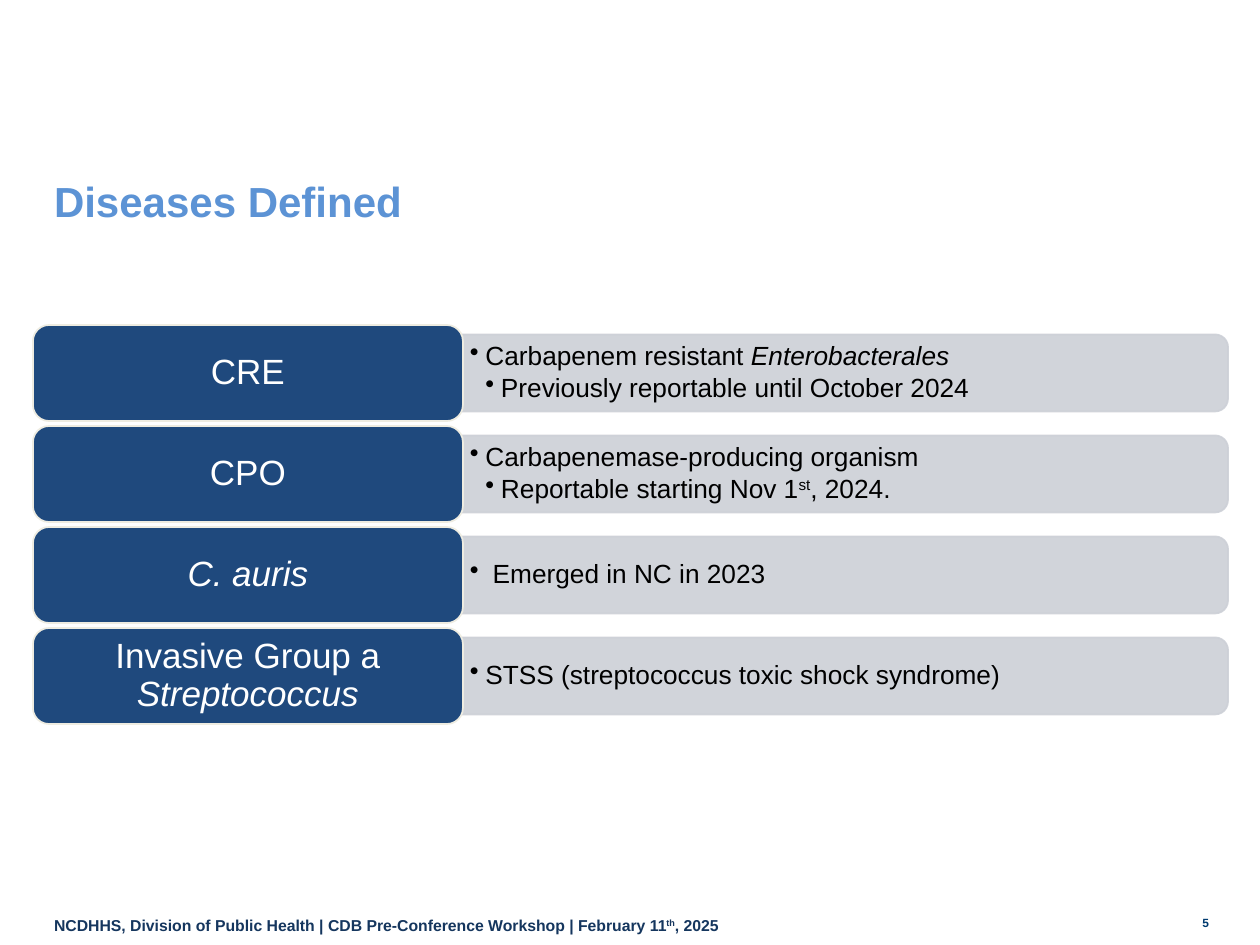
from lxml import etree
from pptx import Presentation
from pptx import util as u
from pptx.dml.color import RGBColor
from pptx.enum import shapes, text
from pptx.oxml.ns import qn

NAVY = RGBColor(0x1F, 0x49, 0x7D)
CREAM = RGBColor(0xEE, 0xEC, 0xE1)
GREY = RGBColor(0xCD, 0xD0, 0xD7)
SKY = RGBColor(0x5C, 0x93, 0xD5)
INK = RGBColor(0x15, 0x36, 0x5E)
BLUE = RGBColor(0x00, 0x3B, 0x70)
WHITE = RGBColor(0xFF, 0xFF, 0xFF)
BLACK = RGBColor(0, 0, 0)

# A paragraph is a list of (words, style) runs; style is "", "i" or "sup".
TITLE = [("Diseases Defined", "")]
FOOTER = [
    ("NCDHHS, Division of Public Health | CDB Pre-Conference Workshop | February 11", ""),
    ("th", "sup"),
    (", 2025", ""),
]
PAGE = [("5", "")]
ROWS = [
    ([("CRE", "")],
     [[("Carbapenem resistant ", ""), ("Enterobacterales", "i")],
      [("Previously reportable until October 2024", "")]]),
    ([("CPO", "")],
     [[("Carbapenemase-producing organism", "")],
      [("Reportable starting Nov 1", ""), ("st", "sup"), (", 2024.", "")]]),
    ([("C. auris", "i")],
     [[(" Emerged in NC in 2023", "")]]),
    ([("Invasive Group a ", ""), ("Streptococcus", "i")],
     [[("STSS (streptococcus toxic shock syndrome)", "")]]),
]

MID, PITCH = 373, 101           # centre of the first row, step between rows
TAG_X, TAG_W, TAG_H = 33, 430, 96
BAR_X, BAR_W, BAR_H = 462, 766, 77
LIST_W, LIST_H = 761, 69
INDENT = 15.5


def px(n):
    return round(n * u.Inches(1) / 126)


def bullet(para, level):
    para.level = level
    para.space_after = u.Pt(2.25)
    ppr = para._p.get_or_add_pPr()
    ppr.set("marL", str(px(INDENT * level)))
    ppr.set("indent", str(-px(INDENT)))
    etree.SubElement(ppr, qn("a:buChar")).set("char", "•")


def write(shape, paras, size, color, bold=False, align=text.PP_ALIGN.LEFT,
          anchor=text.MSO_ANCHOR.TOP, inset=(13, 6), spacing=None, bullets=False):
    """Fill a shape with paragraphs; with bullets, each one goes a level deeper."""
    frame = shape.text_frame
    frame.word_wrap = True
    frame.vertical_anchor = anchor
    frame.margin_left = frame.margin_right = px(inset[0])
    frame.margin_top = frame.margin_bottom = px(inset[1])
    for n, runs in enumerate(paras):
        para = frame.add_paragraph() if n else frame.paragraphs[0]
        para.alignment = align
        if spacing:
            para.line_spacing = spacing
        if bullets:
            bullet(para, n + 1)
        for words, style in runs:
            run = para.add_run()
            run.text = words
            font = run.font
            font.name, font.size, font.bold = "Arial", u.Pt(size), bold
            font.color.rgb = color
            font.italic = style == "i"
            if style == "sup":
                run._r.get_or_add_rPr().set("baseline", "30000")


def add_box(slide, x, y, w, h):
    return slide.shapes.add_textbox(px(x), px(y), px(w), px(h))


def add_block(slide, kind, x, y, w, h, fill, line):
    block = slide.shapes.add_shape(kind, px(x), px(y), px(w), px(h))
    block.shadow.inherit = False
    block.fill.solid()
    block.fill.fore_color.rgb = fill
    block.line.color.rgb = line
    block.line.width = u.Pt(1)
    return block


def add_bar(slide, mid):
    """Draw a bar with round right corners: an upright shape turned by 90°."""
    bar = add_block(slide, shapes.MSO_SHAPE.ROUND_2_SAME_RECTANGLE,
                    BAR_X + (BAR_W - BAR_H) / 2, mid - BAR_W / 2,
                    BAR_H, BAR_W, GREY, GREY)
    bar.rotation = 90
    for color in bar._element.spPr.iter(qn("a:srgbClr")):
        etree.SubElement(color, qn("a:alpha")).set("val", "90000")


def add_row(slide, mid, tag, points):
    add_bar(slide, mid)
    box = add_box(slide, BAR_X, mid - LIST_H / 2, LIST_W, LIST_H)
    write(box, points, 15, BLACK, anchor=text.MSO_ANCHOR.MIDDLE,
          inset=(8, 4), spacing=0.9, bullets=True)
    label = add_block(slide, shapes.MSO_SHAPE.ROUNDED_RECTANGLE,
                      TAG_X, mid - TAG_H / 2, TAG_W, TAG_H, NAVY, CREAM)
    write(label, [tag], 20, WHITE, align=text.PP_ALIGN.CENTER,
          anchor=text.MSO_ANCHOR.MIDDLE, inset=(10, 5), spacing=0.9)


def main():
    deck = Presentation()
    deck.slide_width, deck.slide_height = px(1260), px(945)
    slide = deck.slides.add_slide(deck.slide_layouts[6])
    write(add_box(slide, 41, 910, 1101, 36), [FOOTER], 9, INK, bold=True)
    write(add_box(slide, 1144, 910, 78, 39), [PAGE], 6.8, BLUE, bold=True,
          align=text.PP_ALIGN.RIGHT)
    write(add_box(slide, 41, 175, 1181, 76), [TITLE], 24, SKY, bold=True,
          spacing=0.9)
    for n, (tag, points) in enumerate(ROWS):
        add_row(slide, MID + n * PITCH, tag, points)
    deck.save("out.pptx")


if __name__ == "__main__":
    main()
